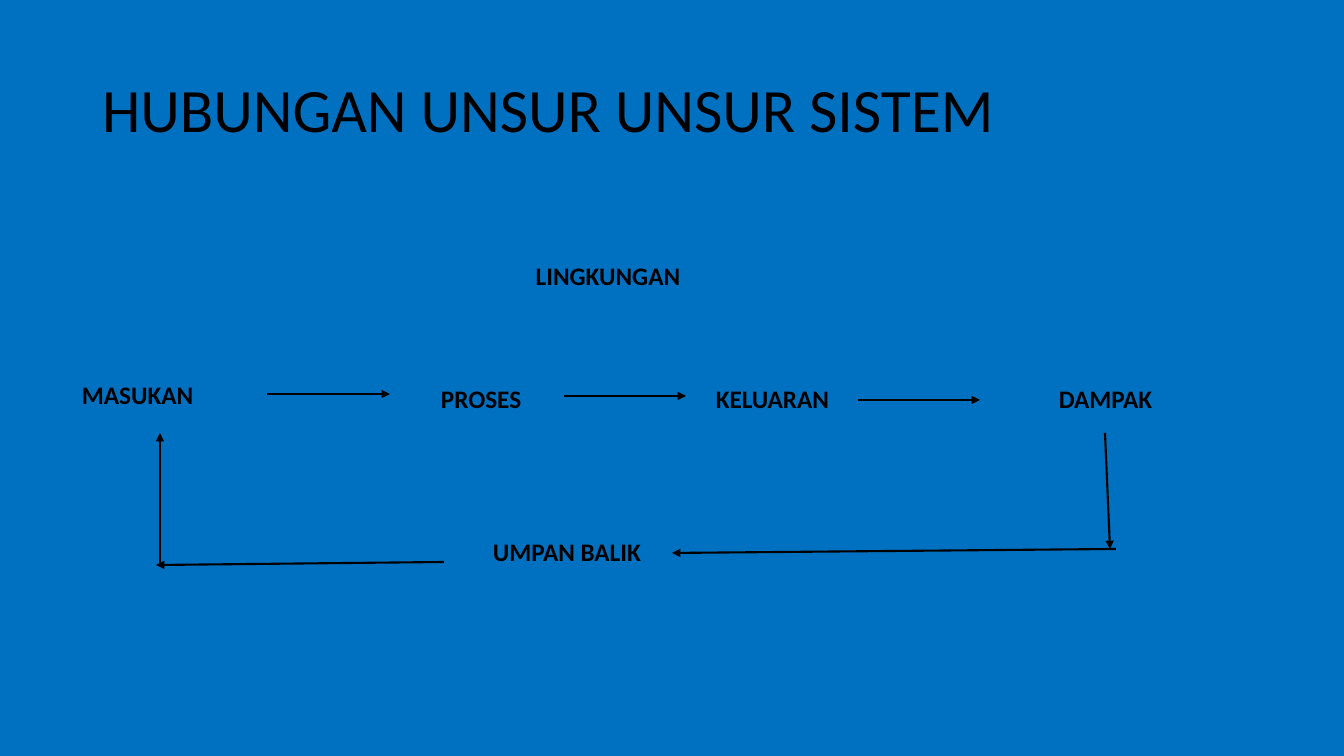
from lxml.etree import SubElement
from pptx import Presentation
from pptx.dml.color import RGBColor
from pptx.enum.shapes import MSO_CONNECTOR
from pptx.enum.text import MSO_ANCHOR, MSO_AUTO_SIZE, PP_ALIGN
from pptx.oxml.ns import qn
from pptx.util import Pt

BLUE = RGBColor(0x00, 0x70, 0xC0)
BLACK = RGBColor(0x00, 0x00, 0x00)
FONT = "Calibri"
SLIDE_SIZE = (1344, 756)
EMU_PER_PX = 12192000 / SLIDE_SIZE[0]

TITLE = ("HUBUNGAN UNSUR UNSUR SISTEM", 92, 40, 1159, 146)
LABEL_HEIGHT = 40
LABELS = [
    ("MASUKAN", 72, 374, 154, PP_ALIGN.LEFT),
    ("PROSES", 431, 378, 133, PP_ALIGN.LEFT),
    ("KELUARAN", 706, 378, 170, PP_ALIGN.LEFT),
    ("DAMPAK", 1049, 378, 133, PP_ALIGN.LEFT),
    ("LINGKUNGAN", 431, 255, 354, PP_ALIGN.CENTER),
    ("UMPAN BALIK", 390, 531, 354, PP_ALIGN.CENTER),
]
ARROWS = [
    ((267, 394), (390, 394)),
    ((160, 563), (160, 433)),
    ((444, 562), (156, 565)),
    ((1116, 549), (672, 553)),
    ((1105, 433), (1110, 549)),
    ((858, 400), (980, 400)),
    ((564, 396), (686, 396)),
]


def px(length):
    """Turn a length in px into EMU."""
    return round(length * EMU_PER_PX)


def write(shape, text, size, bold, align):
    """Set the one paragraph of a shape and return it."""
    shape.text_frame.word_wrap = True
    para = shape.text_frame.paragraphs[0]
    para.text = text
    para.alignment = align
    para.font.name = FONT
    para.font.size = Pt(size)
    para.font.bold = bold
    para.font.color.rgb = BLACK
    return para


def add_title(page):
    """Fill and place the title placeholder."""
    text, left, top, width, height = TITLE
    title = page.shapes.title
    title.left, title.top = px(left), px(top)
    title.width, title.height = px(width), px(height)
    para = write(title, text, 44, False, PP_ALIGN.LEFT)
    para.line_spacing = 0.9
    title.text_frame.vertical_anchor = MSO_ANCHOR.MIDDLE
    title.text_frame.auto_size = MSO_AUTO_SIZE.NONE


def add_label(page, text, left, top, width, align):
    """Add the name of one system element."""
    box = page.shapes.add_textbox(px(left), px(top), px(width), px(LABEL_HEIGHT))
    write(box, text, 18, True, align)
    box.text_frame.auto_size = MSO_AUTO_SIZE.SHAPE_TO_FIT_TEXT


def add_arrow(page, start, end):
    """Add a straight line with an arrowhead at its end."""
    arrow = page.shapes.add_connector(
        MSO_CONNECTOR.STRAIGHT, *map(px, start + end)
    )
    arrow.line.color.rgb = BLACK
    arrow.line.width = Pt(1.5)
    SubElement(arrow.line._get_or_add_ln(), qn("a:tailEnd"), type="triangle")
    SubElement(arrow._element.spPr, qn("a:effectLst"))


def main():
    """Build and save the slide."""
    deck = Presentation()
    deck.slide_width, deck.slide_height = map(px, SLIDE_SIZE)
    page = deck.slides.add_slide(deck.slide_layouts[5])
    page.background.fill.solid()
    page.background.fill.fore_color.rgb = BLUE
    add_title(page)
    for label in LABELS:
        add_label(page, *label)
    for start, end in ARROWS:
        add_arrow(page, start, end)
    deck.save("out.pptx")


if __name__ == "__main__":
    main()
